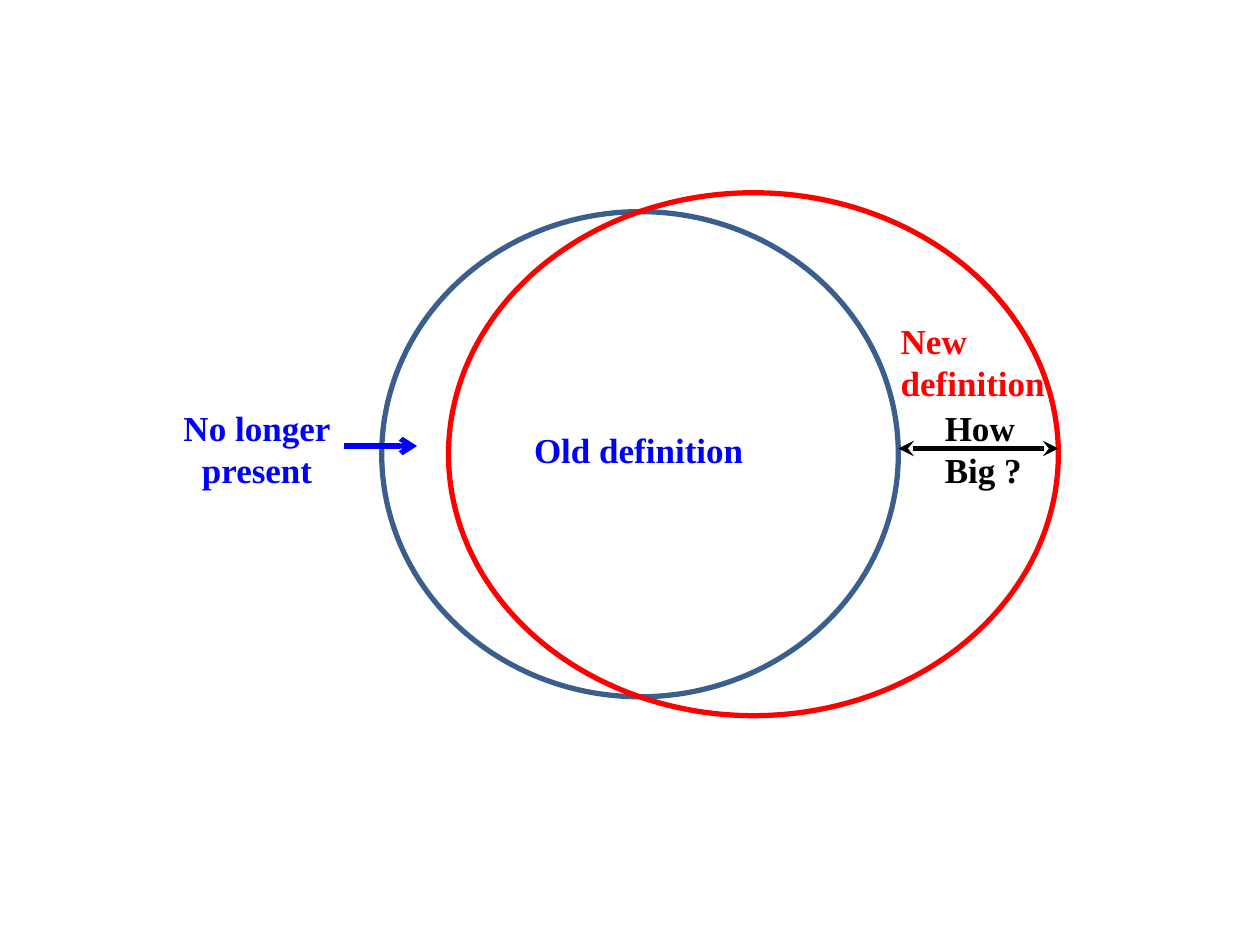
"""Build a slide comparing an old and a new definition as overlapping circles."""
from pptx import Presentation
from pptx.dml.color import RGBColor
from pptx.enum.shapes import MSO_CONNECTOR, MSO_SHAPE
from pptx.enum.text import MSO_AUTO_SIZE, PP_ALIGN
from pptx.oxml.ns import qn
from pptx.util import Inches, Pt
from lxml.etree import SubElement

STEEL = RGBColor(0x3A, 0x5F, 0x8C)
RED = RGBColor(0xFF, 0x00, 0x00)
BLUE = RGBColor(0x00, 0x00, 0xFF)
BLACK = RGBColor(0x00, 0x00, 0x00)
FONT = "Times New Roman"
STROKE = Pt(3)

OLD_CIRCLE = (3.03, 1.68, 4.1, 3.85)
NEW_CIRCLE = (3.56, 1.53, 4.84, 4.15)
LABELS = [
    (["How", "Big ?"], (7.4, 3.18, 1.06, 0.77), dict(color=BLACK, wrap=True)),
    (["Old definition"], (4.14, 3.35, 1.87, 0.44), dict(color=BLUE)),
    (["New", "definition"], (7.05, 2.49, 1.35, 0.77), dict(color=RED)),
    (["No longer", "present"], (1.35, 3.18, 1.38, 0.77),
     dict(color=BLUE, align=PP_ALIGN.CENTER)),
]


def right_edge(area):
    return area[0] + area[2]


def add_circle(shapes, area, color):
    circle = shapes.add_shape(MSO_SHAPE.OVAL, *map(Inches, area))
    circle.shadow.inherit = False
    circle.fill.background()
    circle.line.color.rgb = color
    circle.line.width = STROKE


def add_arrow(shapes, left, right, height, color, **ends):
    arrow = shapes.add_connector(
        MSO_CONNECTOR.STRAIGHT, *map(Inches, (left, height, right, height)))
    arrow.line.color.rgb = color
    arrow.line.width = STROKE
    outline = arrow.line._get_or_add_ln()
    for end, style in ends.items():
        SubElement(outline, qn(f"a:{end}"), type=style)
    SubElement(arrow._element.spPr, qn("a:effectLst"))


def add_label(shapes, lines, area, color, align=PP_ALIGN.LEFT, wrap=False):
    box = shapes.add_textbox(*map(Inches, area))
    frame = box.text_frame
    frame.word_wrap = wrap
    frame.auto_size = MSO_AUTO_SIZE.SHAPE_TO_FIT_TEXT
    frame.text = "\n".join(lines)
    for para in frame.paragraphs:
        para.alignment = align
        font = para.runs[0].font
        font.name, font.size, font.bold = FONT, Pt(20), True
        font.color.rgb = color


def main():
    deck = Presentation()
    deck.slide_width, deck.slide_height = Inches(10), Inches(7.5)
    page = deck.slides.add_slide(deck.slide_layouts[6])
    shapes = page.shapes.add_group_shape().shapes
    add_circle(shapes, OLD_CIRCLE, STEEL)
    add_circle(shapes, NEW_CIRCLE, RED)
    add_arrow(shapes, right_edge(OLD_CIRCLE), right_edge(NEW_CIRCLE), 3.56, BLACK,
              headEnd="stealth", tailEnd="stealth")
    for lines, area, style in LABELS:
        add_label(shapes, lines, area, **style)
    add_arrow(shapes, right_edge(LABELS[-1][1]), 3.31, 3.54, BLUE, tailEnd="arrow")
    deck.save("out.pptx")


if __name__ == "__main__":
    main()
